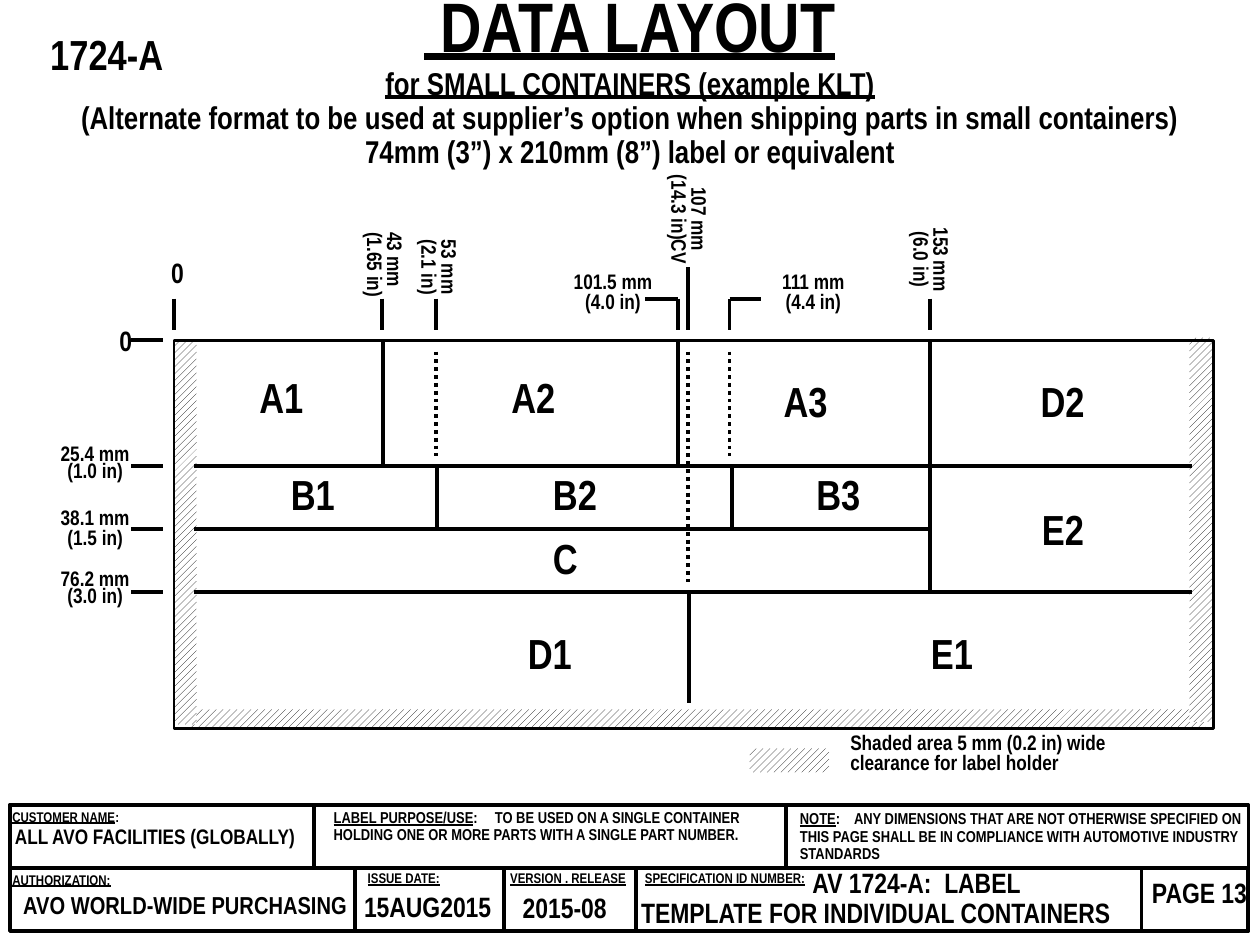
from dataclasses import dataclass
from itertools import pairwise
from typing import NamedTuple

import pptx
import pptx.dml.color
import pptx.enum.dml
import pptx.enum.shapes
import pptx.enum.text
import pptx.oxml.ns
import pptx.util
from lxml import etree

COLORS = {"ink": "000000", "paper": "FFFFFF"}
FONT = "Arial Narrow"

# Slide grid: 10 columns by 7.5 rows
WIDTH, HEIGHT = pptx.util.Inches(10), pptx.util.Inches(7.5)
COLUMN, ROW = WIDTH / 10, HEIGHT / 7.5

# Label outline and its inner grid, in slide columns and rows
LEFT, RIGHT, TOP, BOTTOM = 1.38, 9.63, 2.7, 5.78
INNER_LEFT, INNER_RIGHT = 1.54, 9.46
DIVIDER_ROWS = {"25.4": 3.7, "38.1": 4.2, "76.2": 4.7}
MARKS = {"0": LEFT, "43": 3.03, "53": 3.46, "101.5": 5.38,
         "107": 5.46, "111": 5.79, "153": 7.38}


class Box(NamedTuple):
    left: float
    top: float
    width: float
    height: float


class Segment(NamedTuple):
    x1: float
    y1: float
    x2: float
    y2: float


@dataclass
class Line:
    text: str
    tail: str = ""
    underline: bool = False
    size: float | None = None
    indent: float = 0
    tab: float = 0


@dataclass
class Field:
    box: Box
    lines: list[Line]
    size: float = 12
    spacing: float = 0.9
    align: str = "l"
    wrap: bool = True
    rotation: int = 0


def color(name: str) -> pptx.dml.color.RGBColor:
    return pptx.dml.color.RGBColor.from_string(COLORS[name])


def place(box: Box) -> tuple[int, int, int, int]:
    return (round(box.left * COLUMN), round(box.top * ROW),
            round(box.width * COLUMN), round(box.height * ROW))


def write(shape, lines: list[Line], *, size: float, spacing: float = 1,
          align: str = "l", wrap: bool = False) -> None:
    frame = shape.text_frame
    frame.word_wrap = wrap
    frame.auto_size = pptx.enum.text.MSO_AUTO_SIZE.SHAPE_TO_FIT_TEXT
    frame.vertical_anchor = pptx.enum.text.MSO_ANCHOR.TOP
    alignments = pptx.enum.text.PP_ALIGN
    for number, line in enumerate(lines):
        paragraph = frame.add_paragraph() if number else frame.paragraphs[0]
        paragraph.alignment = alignments.CENTER if align == "c" else alignments.LEFT
        paragraph.line_spacing = spacing
        properties = paragraph._p.get_or_add_pPr()
        if line.indent:
            properties.set("indent", str(round(line.indent * COLUMN)))
        if line.tab:
            stops = etree.SubElement(properties, pptx.oxml.ns.qn("a:tabLst"))
            etree.SubElement(stops, pptx.oxml.ns.qn("a:tab"),
                             pos=str(round(line.tab * COLUMN)), algn="l")
        for words, underline in ((line.text, line.underline), (line.tail, False)):
            if words:
                run = paragraph.add_run()
                run.text = words
                run.font.name = FONT
                run.font.size = pptx.util.Pt(line.size or size)
                run.font.bold = True
                run.font.underline = underline
                run.font.color.rgb = color("ink")


def draw_field(slide, field: Field) -> None:
    shape = slide.shapes.add_textbox(*place(field.box))
    shape.rotation = field.rotation
    write(shape, field.lines, size=field.size, spacing=field.spacing,
          align=field.align, wrap=field.wrap)


def draw_rectangle(slide, box: Box, weight: float = 0, hatched: bool = False) -> None:
    shape = slide.shapes.add_shape(pptx.enum.shapes.MSO_SHAPE.RECTANGLE, *place(box))
    shape.shadow.inherit = False
    if hatched:
        shape.fill.patterned()
        shape.fill.pattern = pptx.enum.dml.MSO_PATTERN.WIDE_UPWARD_DIAGONAL
        shape.fill.fore_color.rgb = color("ink")
        shape.fill.back_color.rgb = color("paper")
    else:
        shape.fill.background()
    if weight:
        shape.line.color.rgb = color("ink")
        shape.line.width = pptx.util.Pt(weight)
    else:
        shape.line.fill.background()


def draw_segment(slide, segment: Segment, dotted: bool = False) -> None:
    start_x, start_y, end_x, end_y = place(Box(*segment))
    rule = slide.shapes.add_connector(pptx.enum.shapes.MSO_CONNECTOR.STRAIGHT,
                                      start_x, start_y, end_x, end_y)
    rule.line.color.rgb = color("ink")
    rule.line.width = pptx.util.Pt(2.25)
    if dotted:
        rule.line.dash_style = pptx.enum.dml.MSO_LINE.ROUND_DOT
    etree.SubElement(rule._element.spPr, pptx.oxml.ns.qn("a:effectLst"))


def draw_heading(slide) -> None:
    title = slide.shapes.title
    title.left, title.top, title.width, title.height = place(Box(0.54, -0.11, 8.92, 1.51))
    write(title, [
        Line(" DATA LAYOUT", underline=True, size=40),
        Line("for SMALL CONTAINERS (example KLT)", underline=True),
        Line("(Alternate format to be used at supplier’s option when shipping "
             "parts in small containers)"),
        Line("74mm (3”) x 210mm (8”) label or equivalent"),
    ], size=18, spacing=0.9, align="c")
    draw_field(slide, Field(Box(0.3, 0.18, 1.48, 0.5), [Line("1724-A")], 24, 1))


def draw_label(slide) -> None:
    # Hatched clearance on three sides, and its key
    for band in (Box(1.5, 5.63, 8.07, 0.16), Box(9.44, 2.68, 0.18, 3.05),
                 Box(LEFT, TOP, 0.18, 3.05), Box(5.95, 5.94, 0.63, 0.19)):
        draw_rectangle(slide, band, hatched=True)

    # Dividers between areas
    first, second, third = DIVIDER_ROWS.values()
    for y, end in ((first, INNER_RIGHT), (second, MARKS["153"]), (third, INNER_RIGHT)):
        draw_segment(slide, Segment(INNER_LEFT, y, end, y))
    for x, start, end in ((3.04, TOP, first), (5.38, TOP, first), (3.47, first, second),
                          (5.81, first, second), (7.38, TOP, third), (5.47, third, 5.58)):
        draw_segment(slide, Segment(x, start, x, end))
    draw_rectangle(slide, Box(LEFT, TOP, RIGHT - LEFT, BOTTOM - TOP), weight=1.5)

    # Area names
    areas = {"A1": (1.96, 2.9), "A2": (3.96, 2.9), "A3": (6.12, 2.93),
             "B1": (2.21, 3.67), "B2": (4.29, 3.67), "B3": (6.38, 3.67),
             "C": (4.29, 4.18), "D1": (4.09, 4.93), "D2": (8.16, 2.93),
             "E1": (7.29, 4.93), "E2": (8.17, 3.95)}
    for name, (left, top) in areas.items():
        box = Box(left, top, 0.4 if name == "C" else 0.55, 0.5)
        draw_field(slide, Field(box, [Line(name)], 24, 1, wrap=False))


def draw_dimensions(slide) -> None:
    # Tick marks, brackets and dotted guides
    for y in (TOP, *DIVIDER_ROWS.values()):
        draw_segment(slide, Segment(1.29, y, 1.04, y))
    for name, x in MARKS.items():
        draw_segment(slide, Segment(x, 2.12 if name == "107" else 2.37, x, 2.62))
    for name, reach in (("101.5", -0.26), ("111", 0.25)):
        draw_segment(slide, Segment(MARKS[name], 2.37, MARKS[name] + reach, 2.37))
    for name, end in (("111", 3.62), ("107", 4.62), ("53", 3.62)):
        draw_segment(slide, Segment(MARKS[name], 2.79, MARKS[name], end), dotted=True)

    # Measurements: millimetres over inches
    for left, top in ((0.85, 2.52), (1.26, 1.98)):
        draw_field(slide, Field(Box(left, top, 0.3, 0.37), [Line("0")], 16, 1, wrap=False))
    for mm, inches, box, spacing, rotation, indent in (
            ("25.4", "(1.0 in)", Box(0.38, 3.5, 0.75, 0.38), 0.7, 0, 0),
            ("38.1", "(1.5 in)", Box(0.38, 3.99, 0.75, 0.42), 0.8, 0, 0),
            ("76.2", "(3.0 in)", Box(0.38, 4.49, 0.75, 0.38), 0.7, 0, 0),
            ("43", "(1.65 in)", Box(2.64, 1.85, 0.8, 0.42), 0.8, 90, 0.08),
            ("53", "(2.1 in)", Box(3.15, 1.91, 0.64, 0.42), 0.8, 90, 0),
            ("101.5", "(4.0 in)", Box(4.45, 2.12, 0.83, 0.42), 0.8, 0, 0),
            ("107", "(14.3 in)CV", Box(5, 1.53, 0.91, 0.42), 0.8, 90, 0),
            ("111", "(4.4 in)", Box(6.1, 2.12, 0.71, 0.42), 0.8, 0, 0),
            ("153", "(6.0 in)", Box(7.02, 1.85, 0.71, 0.42), 0.8, 90, 0)):
        lines = [Line(f"{mm} mm"), Line(inches, indent=indent)]
        draw_field(slide, Field(box, lines, 12, spacing, "c", False, rotation))
    draw_field(slide, Field(Box(6.65, 5.78, 2.23, 0.42), [
        Line("Shaded area 5 mm (0.2 in) wide"), Line("clearance for label holder"),
    ], 12, 0.8, wrap=False))


def draw_title_block(slide) -> None:
    # Frame of each row, then its cells
    for top, edges in ((6.39, (0.08, 2.49, 6.24)),
                       (6.89, (0.08, 2.82, 4, 5.05, 9.06, 9.9))):
        draw_rectangle(slide, Box(0.08, top, 9.83, 0.5), weight=2)
        for left, right in pairwise(edges):
            draw_rectangle(slide, Box(left, top, right - left, 0.5), weight=2)

    # Captions
    for caption, tail, left, top, width in (
            ("CUSTOMER NAME", ":", 0, 6.38, 1.82), ("AUTHORIZATION:", "", 0, 6.88, 1.2),
            ("ISSUE DATE:", "", 2.82, 6.87, 1.1), ("VERSION . RELEASE", "", 3.95, 6.87, 1.35),
            ("SPECIFICATION ID NUMBER:", "", 5.02, 6.87, 1.63)):
        draw_field(slide, Field(Box(left, top, width, 0.22),
                                [Line(caption, tail, underline=True)], 8))

    # Entries
    for entry in (
            Field(Box(0.02, 6.51, 3.09, 0.28), [Line("ALL AVO FACILITIES (GLOBALLY)")]),
            Field(Box(-0.01, 7.04, 2.96, 0.31), [Line("AVO WORLD-WIDE PURCHASING")], 14, align="c"),
            Field(Box(2.74, 7.01, 1.49, 0.36), [Line(" 15AUG2015")], 16, 1),
            Field(Box(4.05, 7.02, 1.4, 0.36), [Line("2015-08")], 16, 1),
            Field(Box(8.99, 6.93, 1.06, 0.34), [Line("PAGE 13")], 16, align="c"),
            Field(Box(4.99, 6.85, 3.97, 0.58), [
                Line("AV 1724-A:  LABEL", indent=1.36),
                Line("TEMPLATE FOR INDIVIDUAL CONTAINERS")], 16, wrap=False),
            Field(Box(2.55, 6.38, 4, 0.36), [
                Line("LABEL PURPOSE/USE", ":\tTO BE USED ON A SINGLE CONTAINER", True, tab=1.28),
                Line("HOLDING ONE OR MORE PARTS WITH A SINGLE PART NUMBER.")], 9),
            Field(Box(6.25, 6.39, 3.78, 0.5), [
                Line("NOTE", ":\tANY DIMENSIONS THAT ARE NOT OTHERWISE SPECIFIED ON THIS PAGE "
                     "SHALL BE IN COMPLIANCE WITH AUTOMOTIVE INDUSTRY STANDARDS",
                     True, tab=0.43)], 9)):
        draw_field(slide, entry)


def main() -> None:
    deck = pptx.Presentation()
    deck.slide_width, deck.slide_height = WIDTH, HEIGHT
    slide = deck.slides.add_slide(deck.slide_layouts[5])
    for draw_part in (draw_heading, draw_label, draw_dimensions, draw_title_block):
        draw_part(slide)
    deck.save("out.pptx")


if __name__ == "__main__":
    main()
